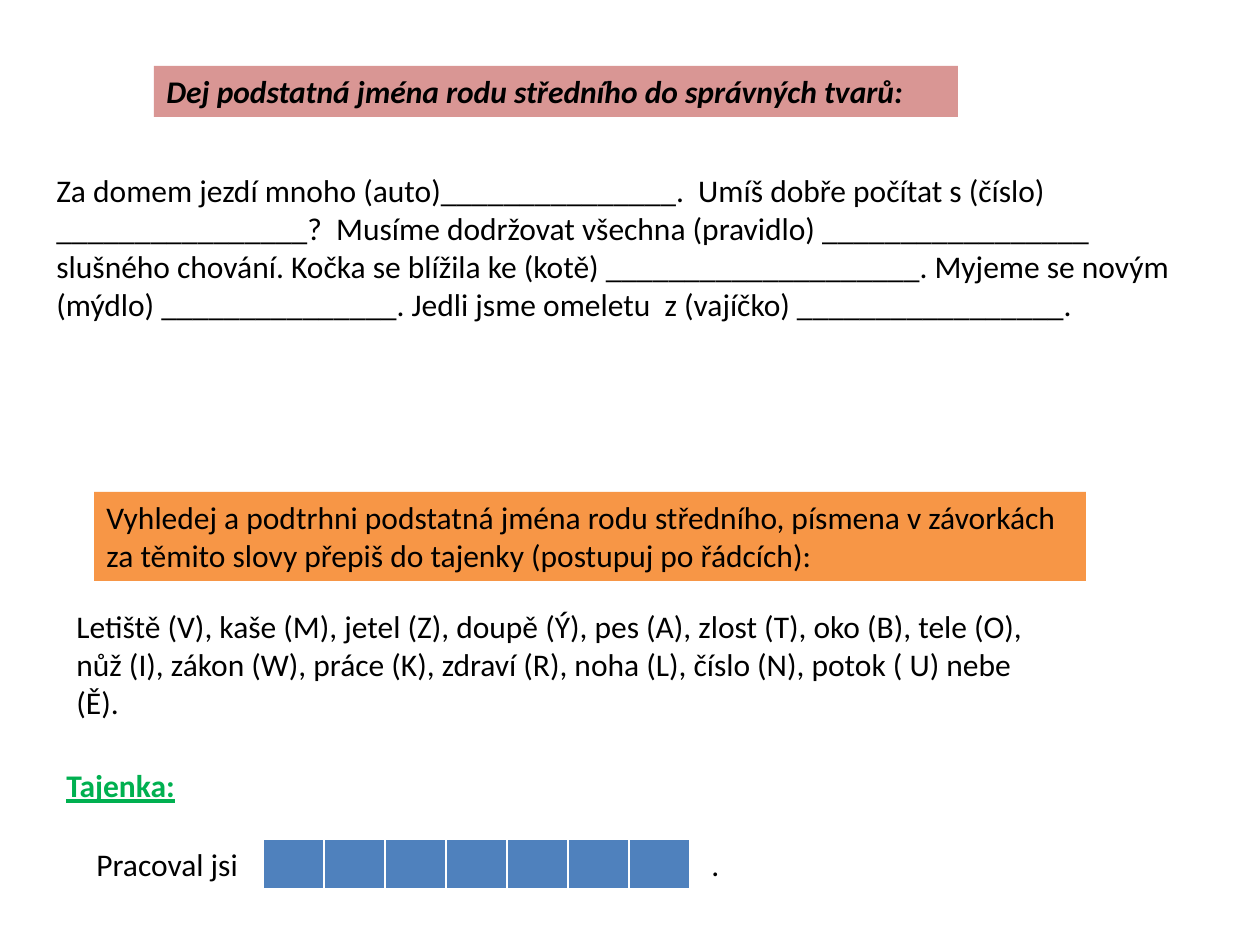
import pptx
import pptx.dml.color
import pptx.enum.shapes
import pptx.enum.text
import pptx.oxml.ns
import pptx.util
from lxml import etree

PX_PER_INCH = 126
COLORS = {
    "rose": "D99694",
    "orange": "F79646",
    "blue": "4F81BD",
    "green": "00B050",
    "black": "000000",
    "white": "FFFFFF",
}


def px(length):
    return pptx.util.Emu(round(length * 914400 / PX_PER_INCH))


def rgb(name):
    return pptx.dml.color.RGBColor.from_string(COLORS[name])


class Worksheet:
    font_name = "Calibri"
    font_size = pptx.util.Pt(18)
    border_widths = {"lnL": 1, "lnR": 1, "lnT": 1, "lnB": 3}

    def __init__(self, slide):
        self.slide = slide

    def set_text(self, shape, text, color="black", bold=False, italic=False, underline=False):
        frame = shape.text_frame
        frame.text = text
        frame.word_wrap = True
        frame.auto_size = pptx.enum.text.MSO_AUTO_SIZE.SHAPE_TO_FIT_TEXT
        frame.vertical_anchor = pptx.enum.text.MSO_ANCHOR.TOP
        for paragraph in frame.paragraphs:
            paragraph.alignment = pptx.enum.text.PP_ALIGN.LEFT
            for run in paragraph.runs:
                font = run.font
                font.name, font.size = self.font_name, self.font_size
                font.bold, font.italic, font.underline = bold, italic, underline
                font.color.rgb = rgb(color)

    def text(self, box, text, **style):
        self.set_text(self.slide.shapes.add_textbox(*map(px, box)), text, **style)

    def banner(self, box, text, fill, **style):
        shape = self.slide.shapes.add_shape(
            pptx.enum.shapes.MSO_SHAPE.RECTANGLE, *map(px, box))
        shape.shadow.inherit = False
        shape.fill.solid()
        shape.fill.fore_color.rgb = rgb(fill)
        shape.line.fill.background()
        self.set_text(shape, text, **style)

    def border(self, cell):
        properties = cell._tc.get_or_add_tcPr()
        qn = pptx.oxml.ns.qn
        for side, points in self.border_widths.items():
            line = etree.SubElement(properties, qn("a:" + side), w=str(pptx.util.Pt(points)))
            solid = etree.SubElement(line, qn("a:solidFill"))
            etree.SubElement(solid, qn("a:srgbClr"), val=COLORS["white"])

    def letter_boxes(self, box, count, fill):
        """Draw one row of equal empty cells for the letters of the answer."""
        table = self.slide.shapes.add_table(1, count, *map(px, box)).table
        for column in table.columns:
            column.width = px(box[2] / count)
        for cell in table.iter_cells():
            self.border(cell)
            cell.fill.solid()
            cell.fill.fore_color.rgb = rgb(fill)
            cell.text_frame.paragraphs[0].font.size = self.font_size


def main():
    presentation = pptx.Presentation()
    presentation.slide_width, presentation.slide_height = px(1260), px(945)
    sheet = Worksheet(presentation.slides.add_slide(presentation.slide_layouts[6]))

    sheet.banner((154, 66, 804, 51),
                 "Dej podstatná jména rodu středního do správných tvarů:",
                 "rose", bold=True, italic=True)
    sheet.text((44, 165, 1142, 165),
               "Za domem jezdí mnoho (auto)_______________.  Umíš dobře počítat s (číslo) "
               "________________?  Musíme dodržovat všechna (pravidlo) _________________ "
               "slušného chování. Kočka se blížila ke (kotě) ____________________. "
               "Myjeme se novým (mýdlo) _______________. "
               "Jedli jsme omeletu  z (vajíčko) _________________.")

    sheet.banner((94, 492, 992, 89),
                 "Vyhledej a podtrhni podstatná jména rodu středního, písmena v závorkách "
                 "za těmito slovy přepiš do tajenky (postupuj po řádcích):",
                 "orange")
    sheet.text((64, 601, 992, 127),
               "Letiště (V), kaše (M), jetel (Z), doupě (Ý), pes (A), zlost (T), oko (B), "
               "tele (O), nůž (I), zákon (W), práce (K), zdraví (R), noha (L), číslo (N), "
               "potok ( U) nebe (Ě).")

    answer_top, line_height = 839, 51
    sheet.letter_boxes((263, answer_top, 427, line_height), 7, "blue")
    sheet.text((54, 760, 179, line_height), "Tajenka:",
               color="green", bold=True, underline=True)
    sheet.text((84, answer_top, 179, line_height), "Pracoval jsi")
    sheet.text((699, answer_top, 59, line_height), ".")

    presentation.save("out.pptx")


if __name__ == "__main__":
    main()
